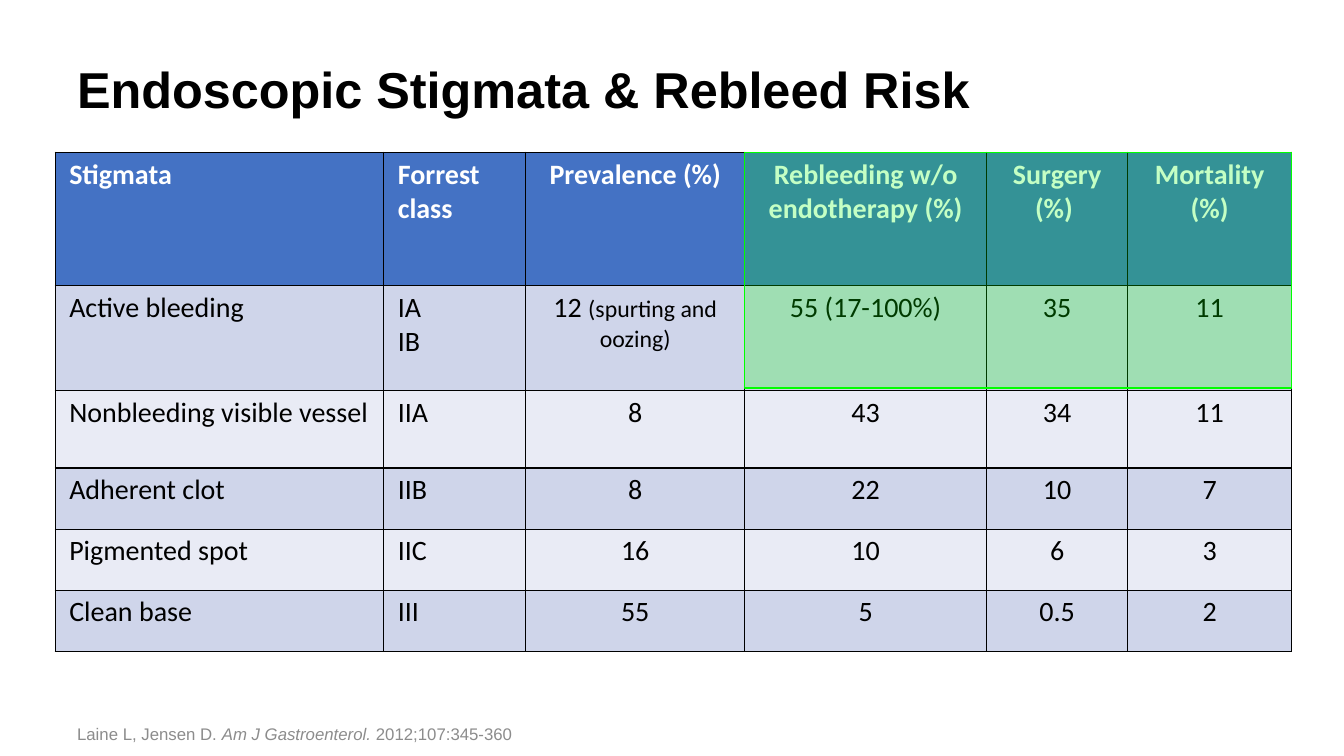
"""Build a slide with a table of endoscopic stigmata and rebleed risk."""
import lxml.etree
import pptx
import pptx.dml.color
import pptx.enum.shapes
import pptx.enum.text
import pptx.oxml
import pptx.oxml.ns
import pptx.util

Pt = pptx.util.Pt
ALIGN = pptx.enum.text.PP_ALIGN
ANCHOR = pptx.enum.text.MSO_ANCHOR
qn = pptx.oxml.ns.qn

TITLE = "Endoscopic Stigmata & Rebleed Risk"
CITATION = [
    ("Laine L, Jensen D. ", {}),
    ("Am J Gastroenterol. ", {"italic": True}),
    ("2012;107:345-360", {}),
]
ROWS = [
    ["Stigmata", "Forrest class", "Prevalence (%)",
     "Rebleeding w/o endotherapy (%)", "Surgery (%) ", "Mortality (%)"],
    ["Active bleeding", "IA\nIB",
     [("12 ", {}), ("(spurting and oozing)", {"size": Pt(17)})],
     "55 (17-100%)", "35", "11"],
    ["Nonbleeding visible vessel", "IIA", "8", "43", "34", "11"],
    ["Adherent clot", "IIB", "8", "22", "10", "7"],
    ["Pigmented spot", "IIC", "16", "10", "6", "3"],
    ["Clean base", "III", "55", "5", "0.5", "2"],
]
COL_WIDTHS = [234.7, 101.5, 156.3, 172.8, 100.8, 117.1]
ROW_HEIGHTS = [95.2, 75, 55.4, 43.6, 43.6, 43.6]
TABLE_LEFT, TABLE_TOP = 39.5, 108.8
LEFT_COLS = 2
MARKED_FROM_COL, MARKED_ROWS = 3, 2
HEADER_FILL, BANDS = "4472C4", ["E9EBF5", "CFD5EA"]
HIGHLIGHT, HIGHLIGHT_ALPHA = "00FF00", 23
TITLE_FONT = {"name": "Arial", "size": Pt(36), "bold": True}
CITATION_FONT = {"name": "Arial", "size": Pt(12)}
CELL_FONT = {"name": "Calibri", "size": Pt(20)}
CELL_FORMAT = {"margin_left": Pt(10), "margin_right": Pt(10),
               "margin_top": Pt(3.6), "margin_bottom": Pt(3.6)}


def rgb(value):
    return pptx.dml.color.RGBColor.from_string(value)


def apply(obj, values):
    for name, value in values.items():
        setattr(obj, name, value)


def paint(fill, color):
    fill.solid()
    fill.fore_color.rgb = rgb(color)


def write(tf, content, font, color, align=ALIGN.LEFT):
    if isinstance(content, str):
        paragraphs = [[(line, {})] for line in content.split("\n")]
    else:
        paragraphs = [content]
    for i, runs in enumerate(paragraphs):
        p = tf.add_paragraph() if i else tf.paragraphs[0]
        p.alignment = align
        for text, extra in runs:
            r = p.add_run()
            r.text = text
            apply(r.font, {**font, **extra})
            r.font.color.rgb = rgb(color)


def add_text(s, top, height, anchor, content, font, color):
    tf = s.shapes.add_textbox(Pt(48), Pt(top), Pt(846), Pt(height)).text_frame
    apply(tf, {"word_wrap": True, "vertical_anchor": anchor})
    write(tf, content, font, color)


def add_borders(cell):
    tcPr = cell._tc.get_or_add_tcPr()
    for i, side in enumerate(("lnL", "lnR", "lnT", "lnB")):
        ln = pptx.oxml.parse_xml(
            f'<a:{side} {pptx.oxml.ns.nsdecls("a")} w="{Pt(1)}">'
            '<a:solidFill><a:srgbClr val="000000"/></a:solidFill>'
            f'</a:{side}>')
        tcPr.insert(i, ln)


def add_risk_table(s):
    table = s.shapes.add_table(
        len(ROWS), len(COL_WIDTHS), Pt(TABLE_LEFT), Pt(TABLE_TOP),
        Pt(sum(COL_WIDTHS)), Pt(sum(ROW_HEIGHTS))).table
    for column, width in zip(table.columns, COL_WIDTHS):
        column.width = Pt(width)
    for i, (row, height) in enumerate(zip(ROWS, ROW_HEIGHTS)):
        table.rows[i].height = Pt(height)
        header = i == 0
        for j, content in enumerate(row):
            cell = table.cell(i, j)
            apply(cell, CELL_FORMAT)
            paint(cell.fill, HEADER_FILL if header else BANDS[i % 2])
            add_borders(cell)
            write(cell.text_frame, content, {**CELL_FONT, "bold": header},
                  "FFFFFF" if header else "000000",
                  ALIGN.LEFT if j < LEFT_COLS else ALIGN.CENTER)


def add_highlight(s):
    sp = s.shapes.add_shape(
        pptx.enum.shapes.MSO_SHAPE.RECTANGLE,
        Pt(TABLE_LEFT + sum(COL_WIDTHS[:MARKED_FROM_COL])), Pt(TABLE_TOP),
        Pt(sum(COL_WIDTHS[MARKED_FROM_COL:])),
        Pt(sum(ROW_HEIGHTS[:MARKED_ROWS]) - 1.7))
    sp.shadow.inherit = False
    paint(sp.fill, HIGHLIGHT)
    paint(sp.line.fill, HIGHLIGHT)
    sp.line.width = Pt(1)
    color = sp._element.spPr.find(qn("a:solidFill")).find(qn("a:srgbClr"))
    lxml.etree.SubElement(color, qn("a:alpha"), val=str(HIGHLIGHT_ALPHA * 1000))


def main():
    prs = pptx.Presentation()
    apply(prs, {"slide_width": Pt(960), "slide_height": Pt(540)})
    s = prs.slides.add_slide(prs.slide_layouts[6])
    add_text(s, 16, 93.6, ANCHOR.MIDDLE, TITLE, TITLE_FONT, "000000")
    add_risk_table(s)
    add_highlight(s)
    add_text(s, 500.4, 34.6, ANCHOR.BOTTOM, CITATION, CITATION_FONT, "8C8C8C")
    prs.save("out.pptx")


if __name__ == "__main__":
    main()
